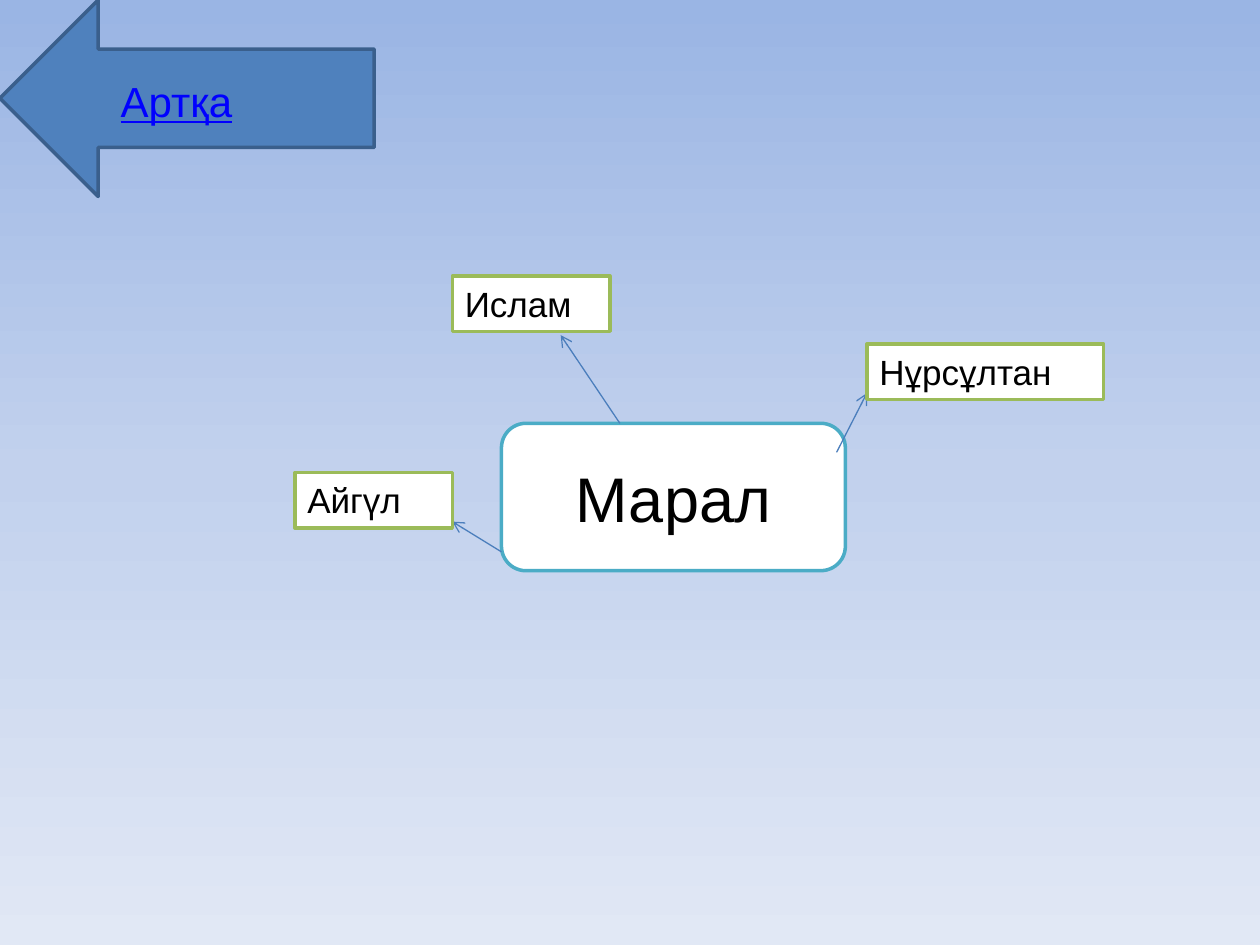
"""Build a slide with a central name linked to three other names."""
from copy import deepcopy
from lxml import etree
from pptx import Presentation
from pptx.dml.color import RGBColor
from pptx.enum import shapes as sh, text as tx
from pptx.oxml import ns
from pptx.util import Inches, Pt

WHITE = RGBColor(0xFF, 0xFF, 0xFF)
BLACK = RGBColor(0, 0, 0)
LINK = RGBColor(0, 0, 0xFF)
BLUE = RGBColor(0x4F, 0x81, 0xBD)
NAVY = RGBColor(0x3A, 0x5F, 0x8C)
TEAL = RGBColor(0x4B, 0xAC, 0xC6)
GREEN = RGBColor(0x9B, 0xBB, 0x59)
ARROW = RGBColor(0x4B, 0x7E, 0xBC)
SKY = [
    (0, RGBColor(0x9A, 0xB5, 0xE4)),
    (0.5, RGBColor(0xC2, 0xD1, 0xED)),
    (1, RGBColor(0xE1, 0xE8, 0xF5)),
]

CENTER = ("Марал", (3.98, 3.36, 2.73, 1.17))
BACK = ("Артқа", (0.86, 0.55, 1.88, 0.5))
BACK_BOX = (0, 0, 2.97, 1.56)
NAMES = [
    ("Ислам", (3.59, 2.19, 1.25, 0.44), (4.92, 3.36, 4.45, 2.66)),
    ("Нұрсұлтан", (6.88, 2.73, 1.88, 0.44), (6.64, 3.59, 6.88, 3.12)),
    ("Айгүл", (2.34, 3.75, 1.25, 0.44), (3.98, 4.38, 3.59, 4.14)),
]


def inch(nums):
    return [Inches(n) for n in nums]


def paint(slide):
    fill = slide.background.fill
    fill.gradient()
    fill.gradient_angle = 270
    first = fill.gradient_stops[0]._gs
    first.addnext(deepcopy(first))
    for stop, (pos, color) in zip(fill.gradient_stops, SKY):
        stop.position = pos
        stop.color.rgb = color


def add_box(slide, kind, box, fill, line):
    shape = slide.shapes.add_shape(kind, *inch(box))
    shape.shadow.inherit = False
    shape.fill.solid()
    shape.fill.fore_color.rgb = fill
    shape.line.color.rgb = line
    shape.line.width = Pt(2)
    return shape


def write(shape, words, size=20, color=BLACK, line=None,
          align=tx.PP_ALIGN.LEFT, anchor=tx.MSO_ANCHOR.TOP):
    frame = shape.text_frame
    frame.word_wrap = True
    frame.vertical_anchor = anchor
    para = frame.paragraphs[0]
    para.alignment = align
    run = para.add_run()
    run.text = words
    run.font.name = "Arial"
    run.font.size = Pt(size)
    run.font.color.rgb = color
    run.font.underline = line


def add_arrow(slide, ends):
    link = slide.shapes.add_connector(sh.MSO_CONNECTOR.STRAIGHT, *inch(ends))
    link.line.color.rgb = ARROW
    link.line.width = Pt(0.75)
    tail = etree.SubElement(link.line._get_or_add_ln(), ns.qn("a:tailEnd"))
    tail.set("type", "arrow")
    etree.SubElement(link._element.spPr, ns.qn("a:effectLst"))


def main():
    deck = Presentation()
    deck.slide_width, deck.slide_height = inch((10, 7.5))
    slide = deck.slides.add_slide(deck.slide_layouts[6])
    paint(slide)

    kind = sh.MSO_SHAPE
    words, box = CENTER
    hub = add_box(slide, kind.ROUNDED_RECTANGLE, box, WHITE, TEAL)
    write(hub, words, size=36, align=tx.PP_ALIGN.CENTER,
          anchor=tx.MSO_ANCHOR.MIDDLE)

    add_box(slide, kind.LEFT_ARROW, BACK_BOX, BLUE, NAVY)
    words, box = BACK
    label = slide.shapes.add_textbox(*inch(box))
    write(label, words, size=24, color=LINK, line=True)

    for words, box, ends in NAMES:
        add_arrow(slide, ends)
        write(add_box(slide, kind.RECTANGLE, box, WHITE, GREEN), words)

    deck.save("out.pptx")


if __name__ == "__main__":
    main()
